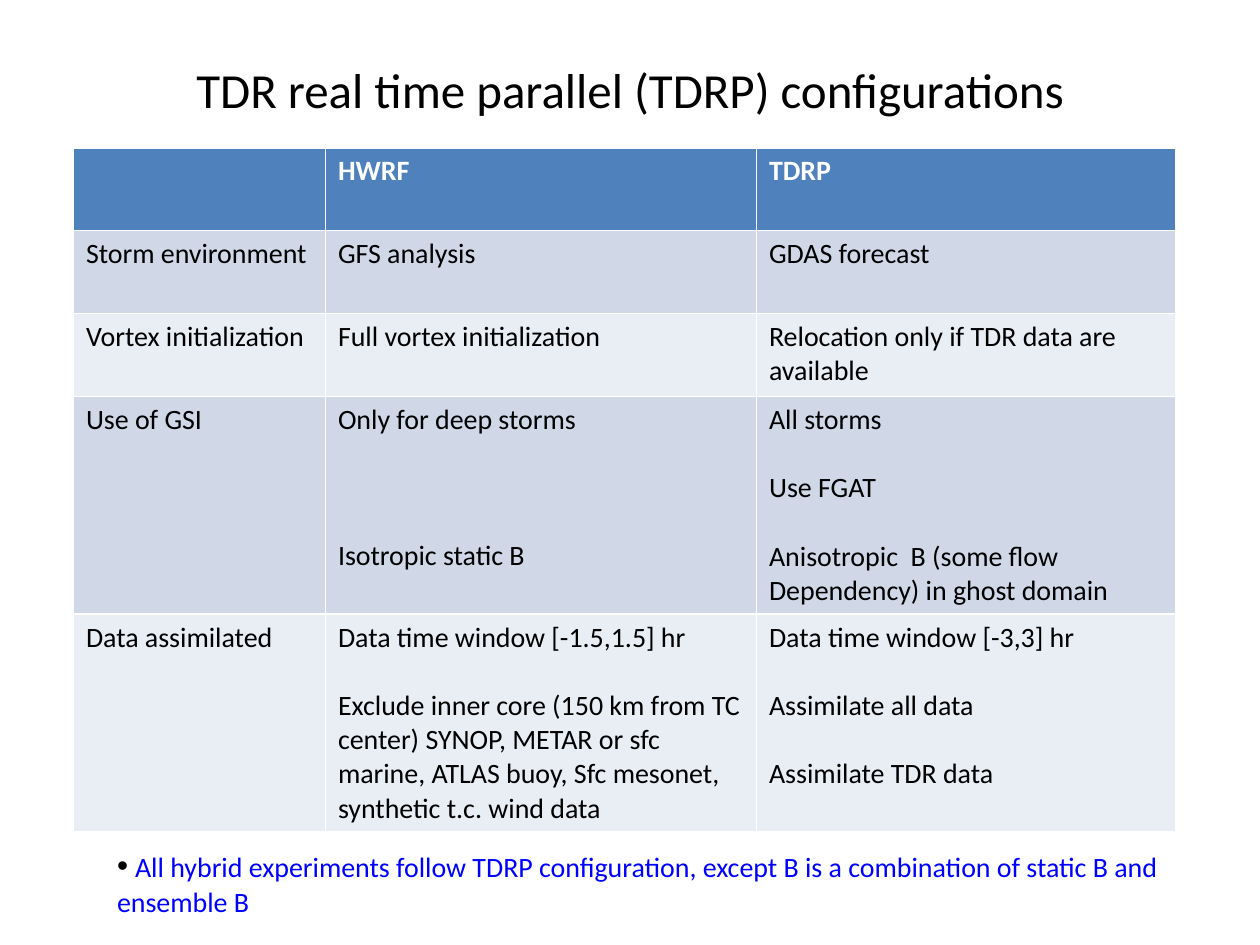
from lxml.etree import SubElement
from pptx import Presentation
from pptx.dml.color import RGBColor
from pptx.enum.text import MSO_ANCHOR, PP_ALIGN
from pptx.oxml.ns import qn
from pptx.util import Cm, Pt

LINE = 19.5
HEADER_FILL = "4F81BD"
BAND_FILLS = ["E9EDF4", "D0D8E8"]


def color(value):
    return RGBColor.from_string(value)


def style(run, size, hex_color, bold=False):
    run.font.name = "Calibri"
    run.font.size = Pt(size)
    run.font.bold = bold
    run.font.color.rgb = color(hex_color)


presentation = Presentation()
presentation.slide_width = Cm(25.4)
presentation.slide_height = Cm(19.05)
slide = presentation.slides.add_slide(presentation.slide_layouts[6])

title = slide.shapes.add_textbox(Cm(1.27), Cm(0.2), Cm(22.86), Cm(3.18)).text_frame
title.word_wrap = True
title.vertical_anchor = MSO_ANCHOR.MIDDLE
title.text = "TDR real time parallel (TDRP) configurations"
title.paragraphs[0].alignment = PP_ALIGN.CENTER
style(title.paragraphs[0].runs[0], 28, "000000")

configurations = [
    ["", "HWRF", "TDRP"],
    ["Storm environment", "GFS analysis", "GDAS forecast"],
    ["Vortex initialization", "Full vortex initialization",
     "Relocation only if TDR data are available"],
    ["Use of GSI", "Only for deep storms\nIsotropic static B",
     "All storms\nUse FGAT\nAnisotropic  B (some flow\nDependency) in ghost domain"],
    ["Data assimilated",
     "Data time window [-1.5,1.5] hr\n"
     "Exclude inner core (150 km from TC center) SYNOP, METAR or sfc marine, "
     "ATLAS buoy, Sfc mesonet, synthetic t.c. wind data",
     "Data time window [-3,3] hr\nAssimilate all data\nAssimilate TDR data"],
]
lines_skipped = {"Isotropic static B": 3, "Dependency) in ghost domain": 0}

column_widths = [5.08, 8.69, 8.46]
row_heights = [1.67, 1.67, 1.67, 4.39, 4.39]
table = slide.shapes.add_table(
    len(row_heights), len(column_widths), Cm(1.48), Cm(2.98),
    Cm(sum(column_widths)), Cm(sum(row_heights))).table
for column, width in zip(table.columns, column_widths):
    column.width = Cm(width)
for row, height in zip(table.rows, row_heights):
    row.height = Cm(height)

for row_index, entries in enumerate(configurations):
    is_header = row_index == 0
    for column_index, entry in enumerate(entries):
        cell = table.cell(row_index, column_index)
        cell.fill.solid()
        cell.fill.fore_color.rgb = color(HEADER_FILL if is_header else BAND_FILLS[row_index % 2])
        cell.text_frame.text = entry
        for position, paragraph in enumerate(cell.text_frame.paragraphs):
            if position > 0:
                paragraph.space_before = Pt(LINE * lines_skipped.get(paragraph.text, 1))
            for run in paragraph.runs:
                style(run, 16, "FFFFFF" if is_header else "000000", is_header)

note = slide.shapes.add_textbox(Cm(2.11), Cm(16.94), Cm(21.59), Cm(1.7)).text_frame
note.word_wrap = True
note.text = " "
note_paragraph = note.paragraphs[0]
style(note_paragraph.runs[0], 18, "000000")
statement = note_paragraph.add_run()
statement.text = ("All hybrid experiments follow TDRP configuration, except B is a "
                  "combination of static B and ensemble B")
style(statement, 16, "0000FF")
note_properties = note_paragraph._p.get_or_add_pPr()
SubElement(note_properties, qn("a:buFont")).set("typeface", "Arial")
SubElement(note_properties, qn("a:buChar")).set("char", "•")

presentation.save("out.pptx")
